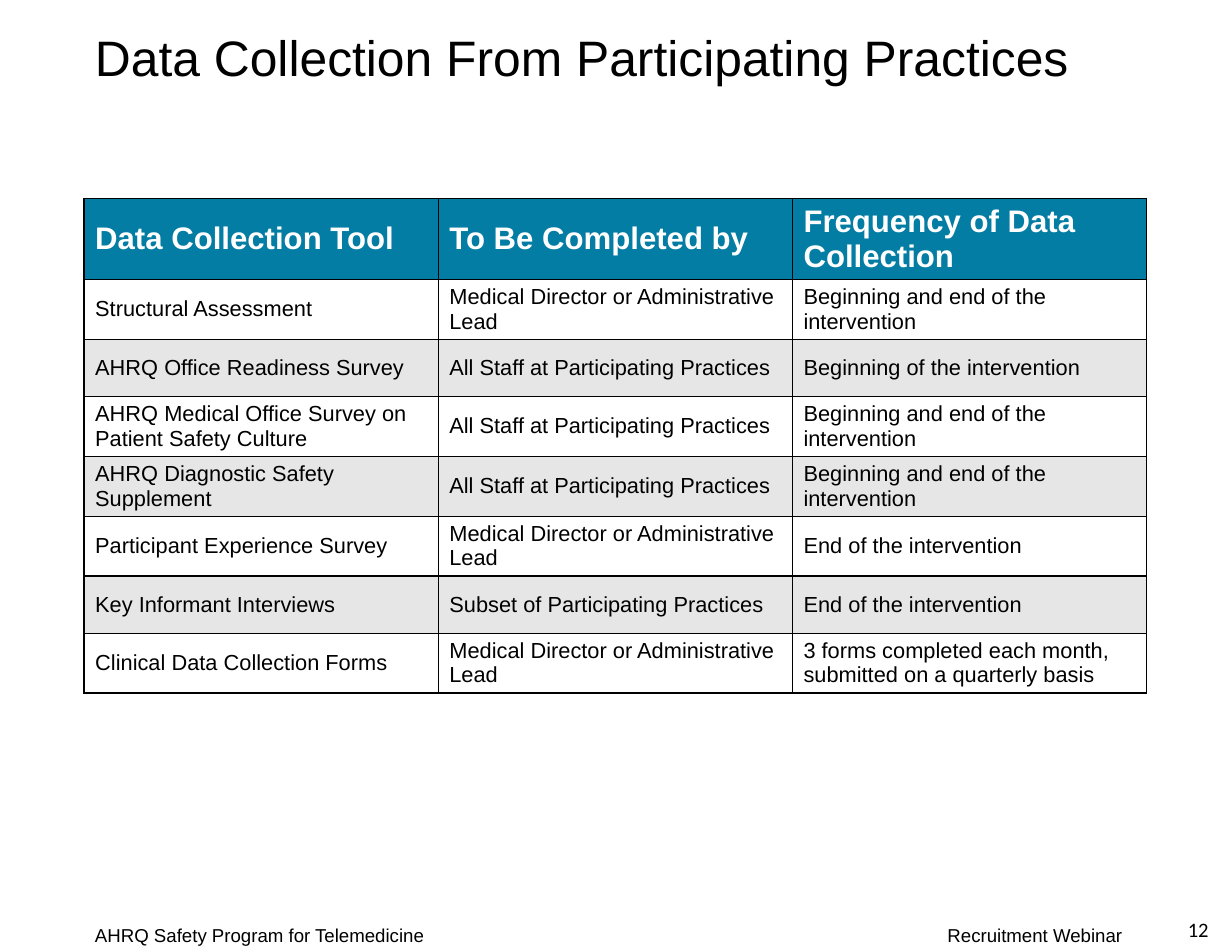
from dataclasses import dataclass

from lxml.etree import SubElement
from pptx import Presentation
from pptx.dml.color import RGBColor
from pptx.enum.text import MSO_ANCHOR as Anchor, PP_ALIGN as Align
from pptx.oxml.ns import qn
from pptx.slide import Slide
from pptx.table import _Cell as Cell
from pptx.text.text import TextFrame
from pptx.util import Pt


@dataclass(frozen=True)
class TextStyle:
    size: float
    color: str = "000000"
    font: str = "Arial"
    bold: bool = False


@dataclass(frozen=True)
class Theme:
    title: TextStyle = TextStyle(32)
    header: TextStyle = TextStyle(20, "FFFFFF", bold=True)
    body: TextStyle = TextStyle(14)
    footer: TextStyle = TextStyle(12)
    page_number: TextStyle = TextStyle(13.2, font="Calibri")
    header_fill: str = "037DA3"
    band_fill: str = "E7E6E6"
    border: str = "000000"
    border_width: float = 1


@dataclass(frozen=True)
class Label:
    text: str
    left: float
    top: float
    width: float
    height: float
    style: TextStyle
    anchor: Anchor = Anchor.TOP
    align: Align = Align.LEFT
    line_spacing: float = 1.0


@dataclass(frozen=True)
class CollectionTool:
    name: str
    completed_by: str
    frequency: str


THEME = Theme()
LEFT, CONTENT_WIDTH = 54, 683.1
TABLE_TOP, HEADER_HEIGHT, ROW_HEIGHT = 127.6, 52, 36.7
HEADER_MARGIN, ROW_MARGIN = 2, 2.45

LABELS = [
    Label("Recruitment Webinar", 602, 590.4, 137, 21.6, THEME.footer),
    Label("AHRQ Safety Program for Telemedicine", LEFT, 590.4, 299.5, 21.6, THEME.footer),
    Label("Data Collection From Participating Practices", LEFT, 0, CONTENT_WIDTH, 77.8,
          THEME.title, Anchor.MIDDLE, line_spacing=0.9),
    Label("12", 738, 584.6, 46, 26, THEME.page_number, Anchor.MIDDLE, Align.RIGHT),
]

LEAD = "Medical Director or Administrative Lead"
ALL_STAFF = "All Staff at Participating Practices"
BEGINNING_AND_END = "Beginning and end of the intervention"
END = "End of the intervention"

HEADER = CollectionTool("Data Collection Tool", "To Be Completed by", "Frequency of Data Collection")
TOOLS = [
    CollectionTool("Structural Assessment", LEAD, BEGINNING_AND_END),
    CollectionTool("AHRQ Office Readiness Survey", ALL_STAFF, "Beginning of the intervention"),
    CollectionTool("AHRQ Medical Office Survey on Patient Safety Culture", ALL_STAFF, BEGINNING_AND_END),
    CollectionTool("AHRQ Diagnostic Safety Supplement", ALL_STAFF, BEGINNING_AND_END),
    CollectionTool("Participant Experience Survey", LEAD, END),
    CollectionTool("Key Informant Interviews", "Subset of Participating Practices", END),
    CollectionTool("Clinical Data Collection Forms", LEAD,
                   "3 forms completed each month, submitted on a quarterly basis"),
]


def write_text(text_frame: TextFrame, text: str, style: TextStyle) -> None:
    text_frame.text = text
    font = text_frame.paragraphs[0].runs[0].font
    font.name, font.size, font.bold = style.font, Pt(style.size), style.bold
    font.color.rgb = RGBColor.from_string(style.color)


def add_label(slide: Slide, label: Label) -> None:
    shape = slide.shapes.add_textbox(Pt(label.left), Pt(label.top), Pt(label.width), Pt(label.height))
    text_frame = shape.text_frame
    text_frame.word_wrap = True
    text_frame.vertical_anchor = label.anchor
    write_text(text_frame, label.text, label.style)
    paragraph = text_frame.paragraphs[0]
    paragraph.alignment = label.align
    paragraph.line_spacing = label.line_spacing


def add_borders(cell: Cell) -> None:
    properties = cell._tc.get_or_add_tcPr()
    # Border lines come before the fill in the cell properties
    for position, side in enumerate(("lnL", "lnR", "lnT", "lnB")):
        line = SubElement(properties, qn(f"a:{side}"), w=str(Pt(THEME.border_width)))
        fill = SubElement(line, qn("a:solidFill"))
        SubElement(fill, qn("a:srgbClr"), val=THEME.border)
        properties.insert(position, line)


def fill_cell(cell: Cell, text: str, style: TextStyle, fill: str | None, margin: float) -> None:
    write_text(cell.text_frame, text, style)
    cell.vertical_anchor = Anchor.MIDDLE
    cell.margin_top = cell.margin_bottom = Pt(margin)
    if fill:
        cell.fill.solid()
        cell.fill.fore_color.rgb = RGBColor.from_string(fill)
    else:
        cell.fill.background()
    add_borders(cell)


def add_tool_table(slide: Slide) -> None:
    rows = [HEADER, *TOOLS]
    height = HEADER_HEIGHT + ROW_HEIGHT * len(TOOLS)
    table = slide.shapes.add_table(len(rows), 3, Pt(LEFT), Pt(TABLE_TOP),
                                   Pt(CONTENT_WIDTH), Pt(height)).table
    for index, tool in enumerate(rows):
        is_header = index == 0
        table.rows[index].height = Pt(HEADER_HEIGHT if is_header else ROW_HEIGHT)
        style = THEME.header if is_header else THEME.body
        margin = HEADER_MARGIN if is_header else ROW_MARGIN
        band = THEME.band_fill if index % 2 == 0 else None
        fill = THEME.header_fill if is_header else band
        for column, text in enumerate((tool.name, tool.completed_by, tool.frequency)):
            fill_cell(table.cell(index, column), text, style, fill, margin)


def main() -> None:
    presentation = Presentation()
    presentation.slide_width, presentation.slide_height = Pt(792), Pt(612)
    slide = presentation.slides.add_slide(presentation.slide_layouts[6])

    # Title, footer and page number
    for label in LABELS:
        add_label(slide, label)

    # Data collection tools
    add_tool_table(slide)

    presentation.save("out.pptx")


if __name__ == "__main__":
    main()
